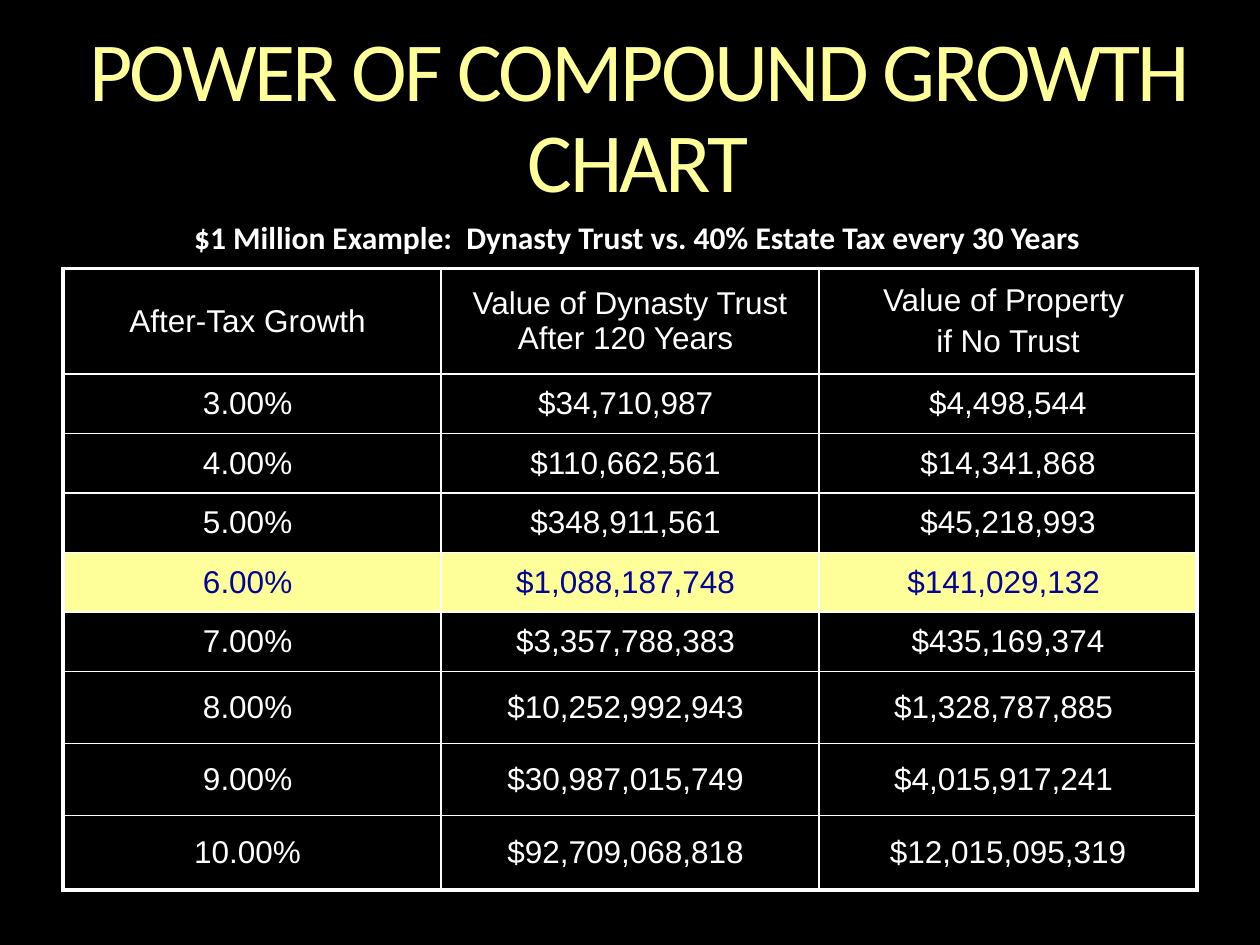
import pptx
import pptx.util
import pptx.dml.color
import pptx.enum.text
import pptx.oxml.ns
import lxml.etree

Cm = pptx.util.Cm
Pt = pptx.util.Pt
MID = pptx.enum.text.MSO_ANCHOR.MIDDLE
WHITE, BLACK, GOLD, NAVY = "FFFFFF", "000000", "FFFF99", "050595"
THIN, THICK = 1, 2.25
HEIGHTS = [2.13] + [1.2] * 5 + [1.45] * 2 + [1.5]
BRIGHT = 4
ROWS = [
    ("After-Tax Growth ", "Value of Dynasty Trust\nAfter 120 Years ",
     "Value of Property \rif No Trust"),
    ("3.00% ", "$34,710,987 ", "$4,498,544"),
    ("4.00% ", "$110,662,561 ", "$14,341,868"),
    ("5.00% ", "$348,911,561 ", "$45,218,993"),
    ("6.00% ", "$1,088,187,748 ", "$141,029,132 "),
    ("7.00% ", "$3,357,788,383 ", "$435,169,374"),
    ("8.00% ", "$10,252,992,943 ", "$1,328,787,885 "),
    ("9.00% ", "$30,987,015,749 ", "$4,015,917,241 "),
    ("10.00% ", "$92,709,068,818 ", "$12,015,095,319"),
]


def paint(fill, color):
    fill.solid()
    fill.fore_color.rgb = pptx.dml.color.RGBColor.from_string(color)


def add_run(para, text, size, face, color, bold=False):
    run = para.add_run()
    run.text = text
    run.font.size = Pt(size)
    run.font.name = face
    run.font.bold = bold
    paint(run.font.fill, color)
    return run


def center(para):
    para.alignment = pptx.enum.text.PP_ALIGN.CENTER
    return para


def add_title(slide):
    title = slide.shapes.title
    title.left, title.top = Cm(0.97), Cm(0.58)
    title.width, title.height = Cm(23.8), Cm(3.68)
    frame = title.text_frame
    frame.word_wrap = True
    frame.vertical_anchor = MID
    frame.margin_left = frame.margin_right = 0
    frame.margin_top = frame.margin_bottom = 0
    para = center(frame.paragraphs[0])
    para.line_spacing = 0.9
    run = add_run(para, "POWER OF COMPOUND GROWTH CHART", 48, "Calibri", GOLD)
    run.font._element.set("spc", "-150")


def add_note(slide):
    box = slide.shapes.add_textbox(Cm(3.58), Cm(4.27), Cm(18.54), Cm(1.02))
    box.text_frame.word_wrap = False
    add_run(center(box.text_frame.paragraphs[0]),
            "$1 Million Example:  Dynasty Trust vs. 40% Estate Tax every 30 Years",
            18, "Calibri", WHITE, True)


def add_edge(cell, side, width):
    qn = pptx.oxml.ns.qn
    sub = lxml.etree.SubElement
    line = sub(cell._tc.get_or_add_tcPr(), qn("a:ln" + side), w=str(Pt(width)))
    sub(sub(line, qn("a:solidFill")), qn("a:srgbClr"), val=WHITE)


def fill_cell(cell, text, ink, back):
    cell.vertical_anchor = MID
    paint(cell.fill, back)
    frame = cell.text_frame
    for spot, part in enumerate(text.split("\r")):
        para = center(frame.add_paragraph() if spot else frame.paragraphs[0])
        if spot:
            para.space_before = Pt(3.6)
        for turn, line in enumerate(part.split("\n")):
            if turn:
                para.add_line_break()
            add_run(para, line, 18, "Arial", ink)


def add_grid(slide):
    count, wide = len(ROWS), len(ROWS[0])
    grid = slide.shapes.add_table(count, wide, Cm(1.27), Cm(5.41),
                                  Cm(22.86), Cm(sum(HEIGHTS))).table
    grid.first_row = grid.horz_banding = False
    for col in grid.columns:
        col.width = Cm(7.62)
    for r, (row, high) in enumerate(zip(ROWS, HEIGHTS)):
        grid.rows[r].height = Cm(high)
        ink, back = (NAVY, GOLD) if r == BRIGHT else (WHITE, BLACK)
        for c, text in enumerate(row):
            cell = grid.cell(r, c)
            outer = {"L": c == 0, "R": c == wide - 1,
                     "T": r == 0, "B": r == count - 1}
            for side, edge in outer.items():
                add_edge(cell, side, THICK if edge else THIN)
            fill_cell(cell, text, ink, back)


def main():
    deck = pptx.Presentation()
    deck.slide_width, deck.slide_height = Cm(25.4), Cm(19.05)
    slide = deck.slides.add_slide(deck.slide_layouts[5])
    paint(slide.background.fill, BLACK)
    add_title(slide)
    add_grid(slide)
    add_note(slide)
    deck.save("out.pptx")


if __name__ == "__main__":
    main()
